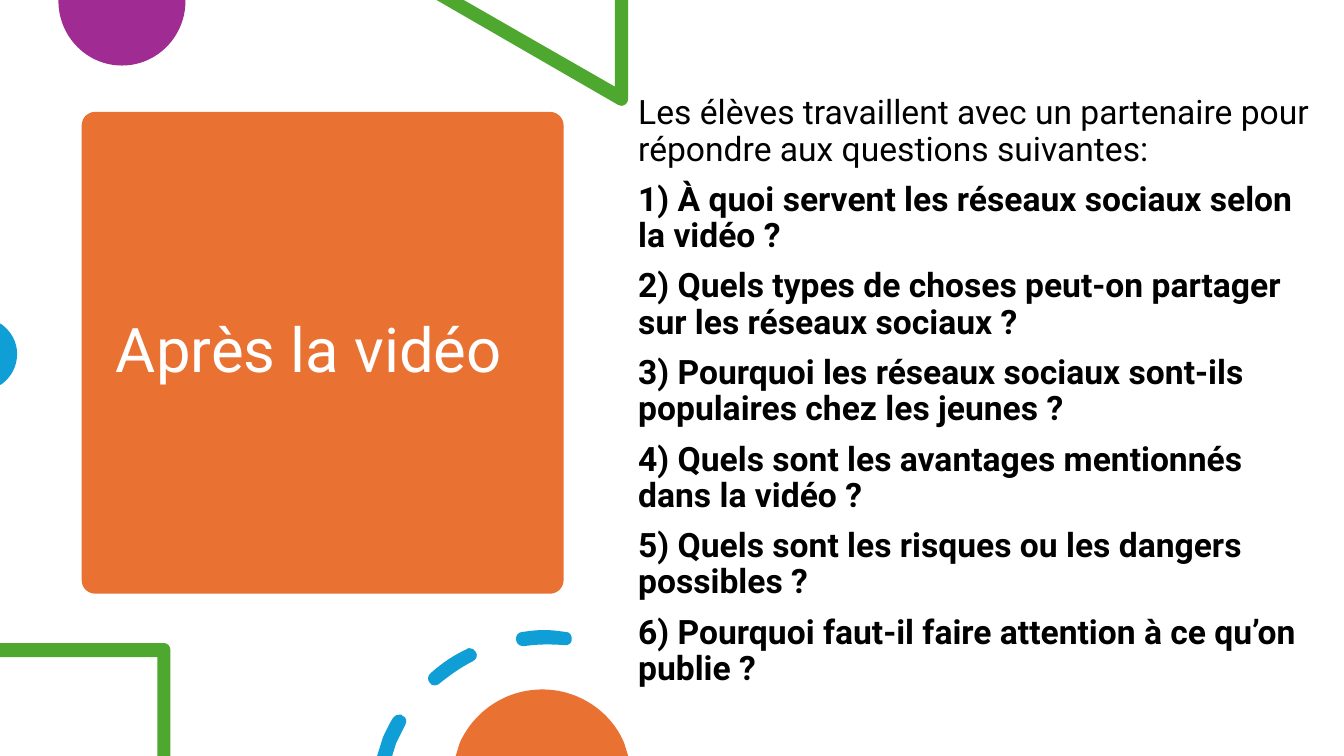
"""Build the slide of questions that follow the video."""
from lxml import etree
from pptx import Presentation
from pptx.dml.color import RGBColor
from pptx.enum.shapes import MSO_SHAPE
from pptx.enum.text import MSO_ANCHOR, MSO_AUTO_SIZE, PP_ALIGN
from pptx.oxml.ns import qn
from pptx.util import Inches, Pt

ROUNDED_RECTANGLE = MSO_SHAPE.ROUNDED_RECTANGLE
MIDDLE, TOP = MSO_ANCHOR.MIDDLE, MSO_ANCHOR.TOP
NO_AUTOFIT = MSO_AUTO_SIZE.NONE
LEFT = PP_ALIGN.LEFT

WHITE = RGBColor(0xFF, 0xFF, 0xFF)
BLACK = RGBColor(0x00, 0x00, 0x00)
ORANGE = RGBColor(0xE9, 0x71, 0x32)
PURPLE = RGBColor(0xA0, 0x2B, 0x93)
GREEN = RGBColor(0x4E, 0xA7, 0x2E)
BLUE = RGBColor(0x0F, 0x9E, 0xD5)

FONT = "Roboto"

INTRODUCTION = "Les élèves travaillent avec un partenaire pour répondre aux questions suivantes:"
QUESTIONS = [
    "À quoi servent les réseaux sociaux selon la vidéo ?",
    "Quels types de choses peut‑on partager sur les réseaux sociaux ?",
    "Pourquoi les réseaux sociaux sont‑ils populaires chez les jeunes ?",
    "Quels sont les avantages mentionnés dans la vidéo ?",
    "Quels sont les risques ou les dangers possibles ?",
    "Pourquoi faut‑il faire attention à ce qu’on publie ?",
]

PURPLE_DISC = [[(1.84, 0), (0.58, 0), (0.58, 0.01), (0.58, 0.36, 0.86, 0.65, 1.21, 0.65),
                (1.56, 0.65, 1.84, 0.36, 1.84, 0.01)]]
GREEN_TRIANGLE = [[(6.23, 0), (6.1, 0), (6.1, 0.86), (4.6, 0), (4.33, 0), (6.13, 1.04),
                   (6.14, 1.05, 6.15, 1.05, 6.16, 1.05), (6.2, 1.05, 6.23, 1.02, 6.23, 0.98)]]
BLUE_DISC = [[(0, 3.21), (0, 3.82), (0.02, 3.81), (0.11, 3.74, 0.17, 3.64, 0.17, 3.51),
              (0.17, 3.39, 0.11, 3.29, 0.02, 3.22)]]
GREEN_CORNER = [[(1.63, 6.38), (0, 6.38), (0, 6.52), (1.56, 6.52), (1.56, 7.5), (1.69, 7.5),
                 (1.69, 6.45), (1.69, 6.41, 1.66, 6.38, 1.63, 6.38)]]
BLUE_DASHES = [
    [(3.97, 7.09), (3.94, 7.08, 3.92, 7.1, 3.9, 7.12), (3.86, 7.18, 3.83, 7.25, 3.8, 7.31),
     (3.74, 7.5), (3.89, 7.5), (3.93, 7.37), (3.96, 7.31, 3.99, 7.25, 4.02, 7.19),
     (4.04, 7.16, 4.03, 7.11, 3.99, 7.1), (3.99, 7.09, 3.98, 7.09, 3.97, 7.09)],
    [(4.65, 6.43), (4.65, 6.43, 4.64, 6.43, 4.63, 6.44), (4.5, 6.5, 4.38, 6.58, 4.27, 6.68),
     (4.24, 6.7, 4.24, 6.75, 4.26, 6.77), (4.27, 6.79, 4.29, 6.8, 4.31, 6.8), (4.31, 6.8),
     (4.33, 6.8, 4.35, 6.79, 4.36, 6.78), (4.46, 6.7, 4.57, 6.62, 4.69, 6.56),
     (4.73, 6.54, 4.74, 6.5, 4.72, 6.47), (4.71, 6.44, 4.68, 6.43, 4.65, 6.43)],
    [(5.4, 6.25), (5.32, 6.25, 5.25, 6.26, 5.18, 6.27), (5.14, 6.27, 5.11, 6.31, 5.12, 6.35),
     (5.12, 6.38, 5.15, 6.41, 5.19, 6.41), (5.19, 6.41, 5.19, 6.41, 5.2, 6.41),
     (5.33, 6.39, 5.46, 6.39, 5.6, 6.4), (5.63, 6.41, 5.67, 6.38, 5.67, 6.35),
     (5.68, 6.31, 5.65, 6.27, 5.62, 6.27), (5.62, 6.27, 5.61, 6.27, 5.61, 6.27),
     (5.54, 6.26, 5.47, 6.25, 5.4, 6.25)],
]
ORANGE_DISC = [[(5.38, 6.84), (5.01, 6.84, 4.7, 7.06, 4.56, 7.37), (4.52, 7.5), (6.23, 7.5),
                (6.19, 7.37), (6.06, 7.06, 5.74, 6.84, 5.38, 6.84)]]
BACK_DECORATIONS = [(PURPLE, PURPLE_DISC), (GREEN, GREEN_TRIANGLE), (BLUE, BLUE_DISC)]
FRONT_DECORATIONS = [(GREEN, GREEN_CORNER), (BLUE, BLUE_DASHES), (ORANGE, ORANGE_DISC)]


def bend(shape, contours):
    """Turn the straight segments that have control points into cubic curves."""
    segments = [segment for contour in contours for segment in contour[1:]]
    lines = list(shape.element.iter(qn("a:lnTo")))
    for line, segment in zip(lines, segments):
        if len(segment) == 6:
            curve = etree.Element(qn("a:cubicBezTo"))
            for x, y in zip(segment[::2], segment[1::2]):
                point = etree.SubElement(curve, qn("a:pt"))
                point.set("x", str(Inches(x) - shape.left))
                point.set("y", str(Inches(y) - shape.top))
            line.getparent().replace(line, curve)


def paint(shape, color):
    """Give a shape a plain fill without line or shadow."""
    shape.fill.solid()
    shape.fill.fore_color.rgb = color
    shape.line.fill.background()
    shape.shadow.inherit = False


presentation = Presentation()
presentation.slide_width = Inches(13.33)
presentation.slide_height = Inches(7.5)
slide = presentation.slides.add_slide(presentation.slide_layouts[1])
title, body = slide.placeholders

card = slide.shapes.add_shape(ROUNDED_RECTANGLE, Inches(0.81), Inches(1.11), Inches(4.78), Inches(4.78))
card.adjustments[0] = 0.028
paint(card, ORANGE)
title.element.addprevious(card.element)

for color, contours in BACK_DECORATIONS + FRONT_DECORATIONS:
    builder = None
    for contour in contours:
        start, *corners = [(Inches(segment[-2]), Inches(segment[-1])) for segment in contour]
        if builder is None:
            builder = slide.shapes.build_freeform(*start)
        else:
            builder.move_to(*start)
        builder.add_line_segments(corners, close=True)
    decoration = builder.convert_to_shape()
    bend(decoration, contours)
    paint(decoration, color)
    if contours is BLUE_DISC:
        decoration.element.addnext(body.element)

numbered = [f"{number}) {question}" for number, question in enumerate(QUESTIONS, 1)]
text_blocks = [
    (title, (1.05, 1.22, 4.31, 4.56), MIDDLE, 44, WHITE, ["Après la vidéo"]),
    (body, (6.23, 0.9, 6.86, 6.23), TOP, 24, BLACK, [INTRODUCTION] + numbered),
]
for placeholder, place, anchor, size, color, texts in text_blocks:
    for name, length in zip(("left", "top", "width", "height"), place):
        setattr(placeholder, name, Inches(length))
    frame = placeholder.text_frame
    frame_format = {"word_wrap": True, "auto_size": NO_AUTOFIT, "vertical_anchor": anchor}
    for name, value in frame_format.items():
        setattr(frame, name, value)
    for index, text in enumerate(texts):
        paragraph = frame.add_paragraph() if index else frame.paragraphs[0]
        properties = paragraph._p.get_or_add_pPr()
        properties.set("marL", "0")
        properties.set("indent", "0")
        etree.SubElement(properties, qn("a:buNone"))
        paragraph_format = {"alignment": LEFT, "line_spacing": 0.9,
                            "space_before": Pt(10 if index else 0)}
        for name, value in paragraph_format.items():
            setattr(paragraph, name, value)
        run = paragraph.add_run()
        run.text = text
        run_format = {"name": FONT, "size": Pt(size), "bold": index > 0}
        for name, value in run_format.items():
            setattr(run.font, name, value)
        run.font.color.rgb = color

presentation.save("out.pptx")
